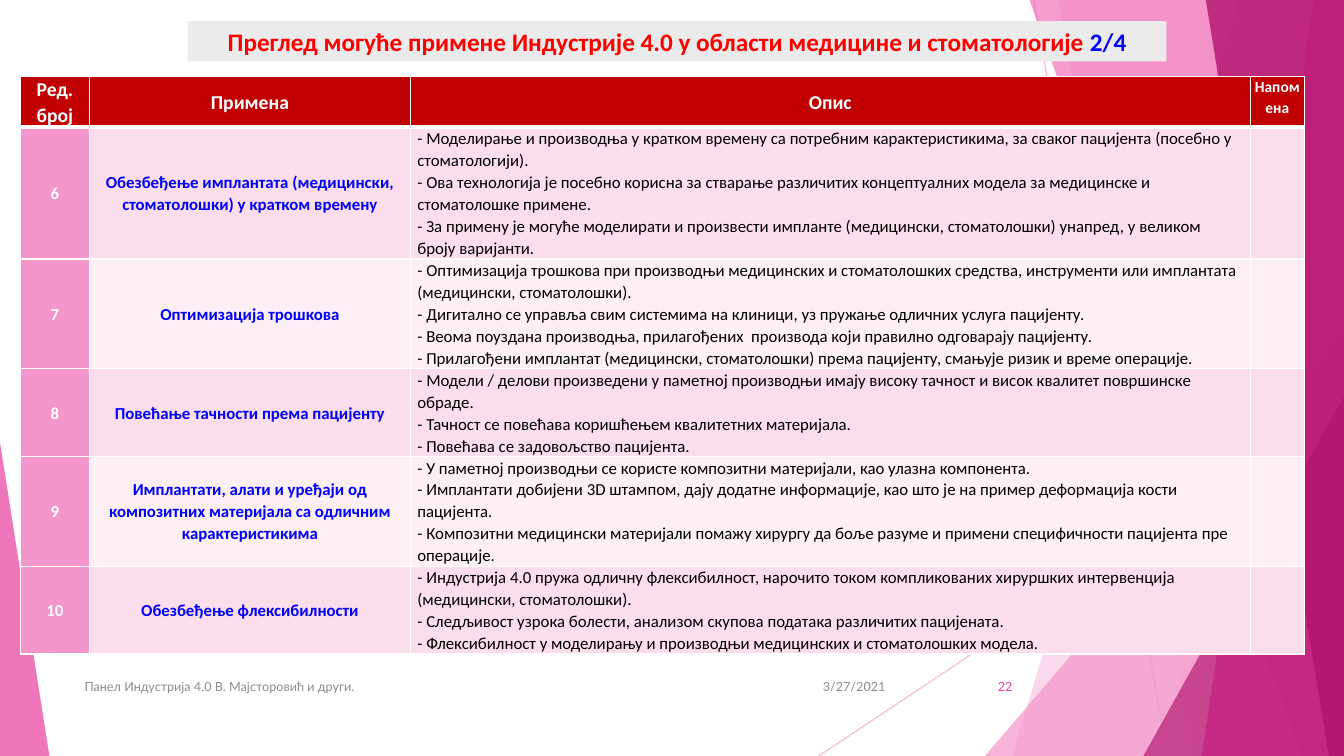
from dataclasses import dataclass

from lxml import etree
from pptx import Presentation
from pptx.dml.color import RGBColor
from pptx.enum.shapes import MSO_CONNECTOR, MSO_SHAPE
from pptx.enum.text import MSO_ANCHOR, MSO_AUTO_SIZE, PP_ALIGN
from pptx.oxml.ns import qn
from pptx.util import Inches, Pt

# Content
TITLE = "Преглед могуће примене Индустрије 4.0 у области медицине и стоматологије "
PART = "2/4"
HEADINGS = ["Ред. број", "Примена", "Опис", "Напомена"]
APPLICATIONS = [
    ("6", "Обезбеђење имплантата (медицински, стоматолошки) у кратком времену", [
        "- Моделирање и производња у кратком времену са потребним карактеристикима, за сваког пацијента (посебно у стоматологији).",
        "- Ова технологија је посебно корисна за стварање различитих концептуалних модела за медицинске и стоматолошке примене.",
        "- За примену је могуће моделирати и произвести импланте (медицински, стоматолошки) унапред, у великом броју варијанти.",
    ]),
    ("7", "Оптимизација трошкова", [
        "- Оптимизација трошкова при производњи медицинских и стоматолошких средства, инструменти или имплантата (медицински, стоматолошки).",
        "- Дигитално се управља свим системима на клиници, уз пружање одличних услуга пацијенту.",
        "- Веома поуздана производња, прилагођених  производа који правилно одговарају пацијенту.",
        "- Прилагођени имплантат (медицински, стоматолошки) према пацијенту, смањује ризик и време операције.",
    ]),
    ("8", "Повећање тачности према пацијенту", [
        "- Модели / делови произведени у паметној производњи имају високу тачност и висок квалитет површинске обраде.",
        "- Тачност се повећава коришћењем квалитетних материјала.",
        "- Повећава се задовољство пацијента.",
    ]),
    ("9", "Имплантати, алати и уређаји од композитних материјала са одличним карактеристикима", [
        "- У паметној производњи се користе композитни материјали, као улазна компонента.",
        "- Имплантати добијени 3D штампом, дају додатне информације, као што је на пример деформација кости пацијента.",
        "- Композитни медицински материјали помажу хирургу да боље разуме и примени специфичности пацијента пре операције.",
    ]),
    ("10", "Обезбеђење флексибилности", [
        "- Индустрија 4.0 пружа одличну флексибилност, нарочито током компликованих хируршких интервенција (медицински, стоматолошки).",
        "- Следљивост узрока болести, анализом скупова података различитих пацијената.",
        "- Флексибилност у моделирању и производњи медицинских и стоматолошких модела.",
    ]),
]


@dataclass(frozen=True)
class Theme:
    font: str = "Calibri"
    footer_font: str = "Lato"
    title_size: float = 18
    heading_size: float = 14
    note_size: float = 11
    body_size: float = 12
    footer_size: float = 9
    light: str = "F496CB"
    pink: str = "EB3D9F"
    dark: str = "B2136D"
    white: str = "FFFFFF"
    black: str = "000000"
    red: str = "FF0000"
    blue: str = "0000FF"
    header: str = "C00000"
    bands: tuple = ("FBDDEC", "FDEFF6")
    panel: str = "EBEBEB"
    grey: str = "8C8C8C"


THEME = Theme()

# Layout in inches
WIDTH, HEIGHT = 13.33, 7.5
TITLE_BOX = (1.86, 0.21, 9.71, 0.4)
TABLE_LEFT, TABLE_TOP = 0.2, 0.76
COLUMNS = [0.69, 3.18, 8.33, 0.54]
ROWS = [0.5, 1.31, 1.09, 0.87, 1.09, 0.87]
FOOTER_TOP, FOOTER_HEIGHT = 6.61, 0.4
FOOTERS = [  # text, left, width, alignment, colour
    ("3/27/2021", 7.88, 1, PP_ALIGN.RIGHT, THEME.grey),
    ("Панел Индустрија 4.0 В. Мајсторовић и други.", 0.74, 6.89, PP_ALIGN.LEFT, THEME.grey),
    ("22", 9.39, 0.75, PP_ALIGN.RIGHT, THEME.pink),
]
RAYS = [(10.25, 0, 11.58, HEIGHT), (WIDTH, 4.03, 8.12, HEIGHT)]
# Bands run to the right edge: top-left x, bottom-left x, colour, opacity
BANDS = [
    (12.28, 10.04, THEME.light, 36),
    (10.5, 11.83, THEME.light, 20),
    (10.21, 12.91, THEME.pink, 50),
    (13.03, 11.92, THEME.pink, 70),
    (11.96, 13.18, THEME.dark, 80),
]
# Triangles stand on the bottom edge: left, top, width, apex, colour, opacity;
# each one is drawn right after the band with the given number
TRIANGLES = {
    2: [(9.77, 3.33, 3.56, 1, THEME.light, 72)],
    5: [(11.34, 3.93, 1.99, 1, THEME.dark, 66), (0, 4.39, 0.49, 0, THEME.pink, 70)],
}


def set_opacity(properties, percent):
    for colour in properties.iter(qn("a:srgbClr")):
        etree.SubElement(colour, qn("a:alpha")).set("val", str(percent * 1000))


def paint(shape, colour, percent):
    shape.shadow.inherit = False
    shape.fill.solid()
    shape.fill.fore_color.rgb = RGBColor.from_string(colour)
    shape.line.fill.background()
    set_opacity(shape._element.spPr, percent)


def style_run(run, size, colour, bold=False, font=THEME.font):
    run.font.name, run.font.size, run.font.bold = font, Pt(size), bold
    run.font.color.rgb = RGBColor.from_string(colour)


def add_decoration(shapes):
    for x1, y1, x2, y2 in RAYS:
        ray = shapes.add_connector(MSO_CONNECTOR.STRAIGHT, *map(Inches, (x1, y1, x2, y2)))
        ray.line.width = Pt(0.75)
        ray.line.color.rgb = RGBColor.from_string(THEME.light)
        set_opacity(ray._element.spPr, 70)
        etree.SubElement(ray._element.spPr, qn("a:effectLst"))
    for number, (top_x, bottom_x, colour, percent) in enumerate(BANDS, 1):
        outline = shapes.build_freeform(Inches(top_x), 0)
        corners = [(WIDTH, 0), (WIDTH, HEIGHT), (bottom_x, HEIGHT)]
        outline.add_line_segments([(Inches(x), Inches(y)) for x, y in corners])
        paint(outline.convert_to_shape(), colour, percent)
        for left, top, width, apex, tint, opacity in TRIANGLES.get(number, []):
            triangle = shapes.add_shape(MSO_SHAPE.ISOSCELES_TRIANGLE, Inches(left),
                                        Inches(top), Inches(width), Inches(HEIGHT - top))
            triangle.adjustments[0] = apex
            paint(triangle, tint, opacity)


def add_footers(shapes):
    for text, left, width, alignment, colour in FOOTERS:
        footer = shapes.add_textbox(Inches(left), Inches(FOOTER_TOP),
                                    Inches(width), Inches(FOOTER_HEIGHT)).text_frame
        footer.word_wrap = True
        footer.vertical_anchor = MSO_ANCHOR.MIDDLE
        footer.text = text
        footer.paragraphs[0].alignment = alignment
        style_run(footer.paragraphs[0].runs[0], THEME.footer_size, colour,
                  font=THEME.footer_font)


def set_borders(cell, bottom):
    properties = cell._tc.get_or_add_tcPr()
    for position, (side, width) in enumerate(zip("LRTB", (1, 1, 1, bottom))):
        border = etree.Element(qn(f"a:ln{side}"), w=str(Pt(width)))
        fill = etree.SubElement(border, qn("a:solidFill"))
        etree.SubElement(fill, qn("a:srgbClr")).set("val", THEME.white)
        properties.insert(position, border)


def fill_cell(cell, lines, fill, size, colour, bold=True, inset=0.04,
              alignment=PP_ALIGN.CENTER, anchor=MSO_ANCHOR.MIDDLE, bottom=1):
    cell.fill.solid()
    cell.fill.fore_color.rgb = RGBColor.from_string(fill)
    set_borders(cell, bottom)
    cell.vertical_anchor = anchor
    cell.margin_left = cell.margin_right = Inches(inset)
    cell.margin_top = cell.margin_bottom = 0
    cell.text_frame.text = "\n".join(lines)
    for paragraph in cell.text_frame.paragraphs:
        paragraph.alignment, paragraph.line_spacing = alignment, 1.07
        for run in paragraph.runs:
            style_run(run, size, colour, bold)


def add_applications(shapes):
    table = shapes.add_table(len(ROWS), len(COLUMNS), Inches(TABLE_LEFT), Inches(TABLE_TOP),
                             Inches(sum(COLUMNS)), Inches(sum(ROWS))).table
    for column, width in zip(table.columns, COLUMNS):
        column.width = Inches(width)
    for row, height in zip(table.rows, ROWS):
        row.height = Inches(height)
    for index, heading in enumerate(HEADINGS):
        is_note = index == len(HEADINGS) - 1
        fill_cell(table.cell(0, index), [heading], THEME.header,
                  THEME.note_size if is_note else THEME.heading_size, THEME.white,
                  anchor=MSO_ANCHOR.TOP if is_note else MSO_ANCHOR.MIDDLE, bottom=3)
    for row, (number, application, description) in enumerate(APPLICATIONS, 1):
        band = THEME.bands[(row - 1) % 2]
        size = THEME.body_size
        fill_cell(table.cell(row, 0), [number], THEME.light, size, THEME.white)
        fill_cell(table.cell(row, 1), [application], band, size, THEME.blue, inset=0.07)
        fill_cell(table.cell(row, 2), description, band, size, THEME.black, bold=False,
                  inset=0.07, alignment=PP_ALIGN.LEFT)
        fill_cell(table.cell(row, 3), [], band, size, THEME.black)


def add_title(shapes):
    title = shapes.title
    title.left, title.top, title.width, title.height = map(Inches, TITLE_BOX)
    title.fill.solid()
    title.fill.fore_color.rgb = RGBColor.from_string(THEME.panel)
    frame = title.text_frame
    frame.auto_size, frame.word_wrap = MSO_AUTO_SIZE.NONE, True
    frame.vertical_anchor = MSO_ANCHOR.TOP
    frame.text = TITLE
    heading = frame.paragraphs[0]
    heading.alignment = PP_ALIGN.CENTER
    heading.add_run().text = PART
    for run, colour in zip(heading.runs, (THEME.red, THEME.blue)):
        style_run(run, THEME.title_size, colour, bold=True)
    shapes._spTree.append(title._element)  # bring to front


def main():
    deck = Presentation()
    deck.slide_width, deck.slide_height = Inches(WIDTH), Inches(HEIGHT)
    shapes = deck.slides.add_slide(deck.slide_layouts[5]).shapes
    add_decoration(shapes)
    add_footers(shapes)
    add_applications(shapes)
    add_title(shapes)
    deck.save("out.pptx")


if __name__ == "__main__":
    main()
